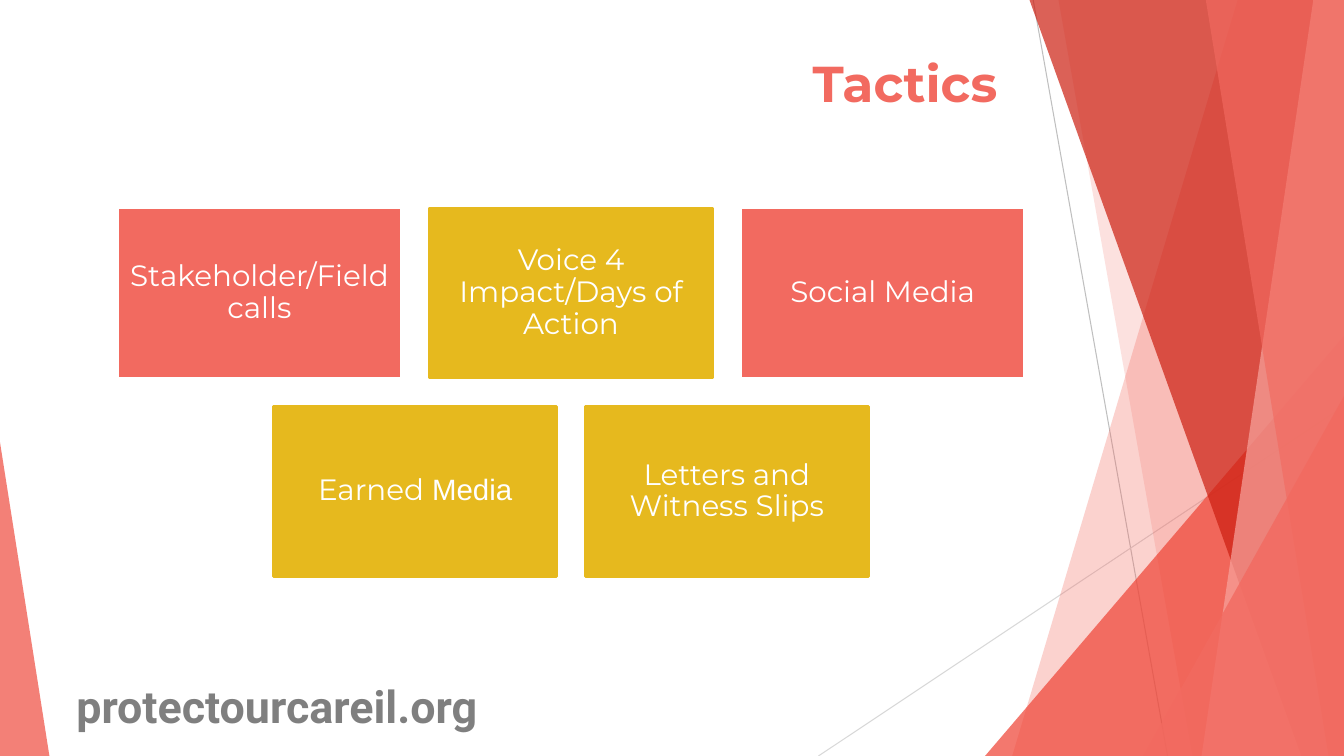
from dataclasses import dataclass

from lxml.etree import SubElement
from pptx import Presentation
from pptx.dml.color import RGBColor
from pptx.enum.shapes import MSO_CONNECTOR, MSO_SHAPE
from pptx.enum.text import MSO_ANCHOR, PP_ALIGN
from pptx.oxml.ns import qn
from pptx.shapes.autoshape import Shape
from pptx.shapes.shapetree import SlideShapes
from pptx.text.text import Font, TextFrame
from pptx.util import Pt

CORAL = RGBColor(0xF2, 0x6A, 0x60)
RED = RGBColor(0xEF, 0x45, 0x37)
DARK_RED = RGBColor(0xCC, 0x1E, 0x10)
PINK = RGBColor(0xF7, 0xA4, 0x9E)
GOLD = RGBColor(0xE6, 0xB9, 0x1E)
WHITE = RGBColor(0xFF, 0xFF, 0xFF)
GREY = RGBColor(0x7F, 0x7F, 0x7F)
STEEP_GREY = RGBColor(0xBF, 0xBF, 0xBF)
SHALLOW_GREY = RGBColor(0xD8, 0xD8, 0xD8)

WIDTH, HEIGHT = 960, 540
FACET_TOP = -0.6
CARD_WIDTH, CARD_HEIGHT = 202.3, 121.4
CARD_LEFT, CARD_TOP = 84.1, 148.6
COLUMN_STEP, ROW_STEP = 222.6, 141.7


@dataclass(frozen=True)
class Ray:
    start: tuple[float, float]
    end: tuple[float, float]
    color: RGBColor


@dataclass(frozen=True)
class Facet:
    top_left: float
    bottom_left: float
    color: RGBColor
    opacity: int


@dataclass(frozen=True)
class Wedge:
    left: float
    top: float
    width: float
    apex: float
    color: RGBColor
    opacity: int


@dataclass(frozen=True)
class Card:
    column: float
    row: int
    runs: tuple[tuple[str, str], ...]
    fill: RGBColor
    border: RGBColor


@dataclass(frozen=True)
class Label:
    text: str
    box: tuple[float, float, float, float]
    inset: float
    font: str
    size: float
    color: RGBColor
    align: PP_ALIGN


RAYS = [
    Ray((738, 0), (834, HEIGHT), STEEP_GREY),
    Ray((WIDTH, 290), (584.6, HEIGHT), SHALLOW_GREY),
]
BACKDROP = [
    Facet(884.2, 723, CORAL, 30),
    Facet(756, 851.8, CORAL, 20),
    Wedge(703.6, 240, 256.4, 1, RED, 72),
    Facet(735.2, 929.6, DARK_RED, 70),
    Facet(938.2, 858.3, PINK, 70),
    Facet(861.2, 949, CORAL, 65),
    Wedge(816.6, 282.8, 143.4, 1, CORAL, 80),
    Wedge(0, 316, 35.3, 0, CORAL, 85),
]
LABELS = [
    Label("protectourcareil.org", (47.5, 481.2, 333.4, 46.1), 3.6,
          "Roboto", 32, GREY, PP_ALIGN.LEFT),
    Label("Tactics", (101.7, 30.2, 617.8, 54), 7.2,
          "Montserrat", 36, CORAL, PP_ALIGN.RIGHT),
]
CARDS = [
    Card(0, 0, (("Stakeholder/Field calls", "Montserrat"),), CORAL, WHITE),
    Card(1, 0, (("Voice 4 Impact/Days of Action", "Montserrat"),), GOLD, GOLD),
    Card(2, 0, (("Social Media", "Montserrat"),), CORAL, WHITE),
    Card(0.5, 1, (("Earned", "Montserrat"), (" Media", "Arial")), GOLD, GOLD),
    Card(1.5, 1, (("Letters and Witness Slips", "Montserrat"),), GOLD, GOLD),
]


def set_font(font: Font, name: str, size: float, color: RGBColor) -> None:
    font.name = name
    font.size = Pt(size)
    font.color.rgb = color


def set_insets(frame: TextFrame, side: float, vertical: float) -> None:
    frame.word_wrap = True
    frame.margin_left = frame.margin_right = Pt(side)
    frame.margin_top = frame.margin_bottom = Pt(vertical)


def draw_ray(shapes: SlideShapes, ray: Ray) -> None:
    line = shapes.add_connector(
        MSO_CONNECTOR.STRAIGHT, *map(Pt, ray.start + ray.end))
    line.line.color.rgb = ray.color
    line.line.width = Pt(0.75)
    SubElement(line._element.spPr, qn("a:effectLst"))


def tint(shape: Shape, color: RGBColor, opacity: int) -> None:
    shape.shadow.inherit = False
    shape.line.fill.background()
    shape.fill.solid()
    shape.fill.fore_color.rgb = color
    fill_color = shape._element.spPr.find(f".//{qn('a:srgbClr')}")
    SubElement(fill_color, qn("a:alpha"), val=str(opacity * 1000))


def draw_facet(shapes: SlideShapes, facet: Facet) -> None:
    outline = shapes.build_freeform(Pt(facet.top_left), Pt(FACET_TOP))
    corners = [(WIDTH, FACET_TOP), (WIDTH, HEIGHT), (facet.bottom_left, HEIGHT)]
    outline.add_line_segments([(Pt(x), Pt(y)) for x, y in corners], close=True)
    tint(outline.convert_to_shape(), facet.color, facet.opacity)


def draw_wedge(shapes: SlideShapes, wedge: Wedge) -> None:
    triangle = shapes.add_shape(
        MSO_SHAPE.ISOSCELES_TRIANGLE, Pt(wedge.left), Pt(wedge.top),
        Pt(wedge.width), Pt(HEIGHT - wedge.top))
    triangle.adjustments[0] = wedge.apex
    tint(triangle, wedge.color, wedge.opacity)


def draw_label(shapes: SlideShapes, label: Label) -> None:
    frame = shapes.add_textbox(*map(Pt, label.box)).text_frame
    set_insets(frame, 7.2, label.inset)
    frame.text = label.text
    paragraph = frame.paragraphs[0]
    paragraph.alignment = label.align
    set_font(paragraph.font, label.font, label.size, label.color)
    paragraph.font.bold = True


def draw_card(shapes: SlideShapes, card: Card) -> None:
    box = shapes.add_shape(
        MSO_SHAPE.RECTANGLE,
        Pt(CARD_LEFT + card.column * COLUMN_STEP),
        Pt(CARD_TOP + card.row * ROW_STEP),
        Pt(CARD_WIDTH), Pt(CARD_HEIGHT))
    box.shadow.inherit = False
    box.fill.solid()
    box.fill.fore_color.rgb = card.fill
    box.line.color.rgb = card.border
    box.line.width = Pt(2)
    frame = box.text_frame
    set_insets(frame, 6.3, 6.3)
    frame.vertical_anchor = MSO_ANCHOR.MIDDLE
    paragraph = frame.paragraphs[0]
    paragraph.alignment = PP_ALIGN.CENTER
    paragraph.line_spacing = 0.9
    for text, font_name in card.runs:
        run = paragraph.add_run()
        run.text = text
        set_font(run.font, font_name, 21, WHITE)


def main() -> None:
    deck = Presentation()
    deck.slide_width, deck.slide_height = Pt(WIDTH), Pt(HEIGHT)
    shapes = deck.slides.add_slide(deck.slide_layouts[6]).shapes
    for ray in RAYS:
        draw_ray(shapes, ray)
    for piece in BACKDROP:
        if isinstance(piece, Facet):
            draw_facet(shapes, piece)
        else:
            draw_wedge(shapes, piece)
    for label in LABELS:
        draw_label(shapes, label)
    for card in CARDS:
        draw_card(shapes, card)
    deck.save("out.pptx")


if __name__ == "__main__":
    main()
